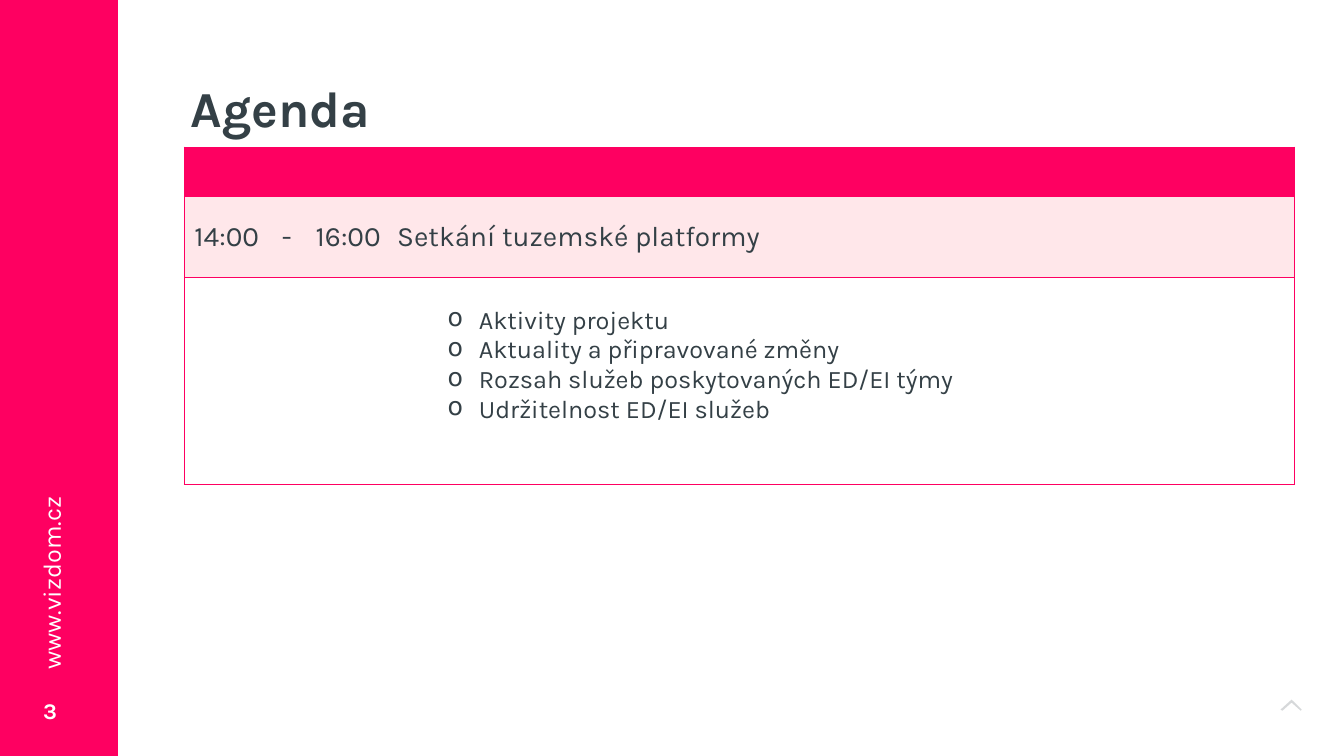
from lxml import etree
from pptx import Presentation
from pptx.dml.color import RGBColor
from pptx.enum.shapes import MSO_SHAPE
from pptx.enum.text import MSO_ANCHOR as Anchor, PP_ALIGN as Align
from pptx.oxml.ns import qn
from pptx.util import Inches, Pt

WIDTH, HEIGHT = 13.33, 7.5
PINK, BLUSH, WHITE, SLATE = "FE0061", "FFE7EA", "FFFFFF", "344046"
FONT = "Karla"

TITLE = "Agenda"
WEBSITE = "www.vizdom.cz"
PAGE_NUMBER = "3"
SESSION = ["14:00", "-", "16:00", "Setkání tuzemské platformy"]
TOPICS = [
    "Aktivity projektu",
    "Aktuality a připravované změny",
    "Rozsah služeb poskytovaných ED/EI týmy",
    "Udržitelnost ED/EI služeb",
]
COLUMNS = [0.84, 0.35, 0.87, 8.95]
ROWS = [(0.49, PINK), (0.8, BLUSH), (2.06, WHITE)]
TABLE_LEFT, TABLE_TOP = 1.83, 1.46
# Chevron outline in hundredths of an inch
CHEVRON = [(1281, 694), (1291, 704), (1290, 705), (1281, 697), (1272, 705), (1270, 704)]


def color(value):
    return RGBColor.from_string(value)


def paint(shape, value):
    shape.shadow.inherit = False
    shape.fill.solid()
    shape.fill.fore_color.rgb = color(value)
    shape.line.fill.background()


def write(para, text, size, ink=SLATE, bold=False, align=Align.LEFT):
    para.alignment = align
    span = para.add_run()
    span.text = text
    span.font.name = FONT
    span.font.size = Pt(size)
    span.font.bold = bold
    span.font.color.rgb = color(ink)


def add_text(slide, text, left, top, width, height, inset=0.1, anchor=Anchor.TOP,
             spacing=1.0, rotation=0, **style):
    box = slide.shapes.add_textbox(*map(Inches, (left, top, width, height)))
    box.rotation = rotation
    frame = box.text_frame
    frame.word_wrap = True
    frame.vertical_anchor = anchor
    frame.margin_left = frame.margin_right = Inches(inset)
    para = frame.paragraphs[0]
    para.line_spacing = spacing
    write(para, text, **style)


def add_bullet(para):
    properties = para._p.get_or_add_pPr()
    properties.set("marL", str(Inches(0.81)))
    properties.set("indent", str(Inches(-0.31)))
    etree.SubElement(properties, qn("a:buChar")).set("char", "o")


def set_borders(cell, sides):
    """Draw the named sides (L, R, T, B) in pink and hide the others."""
    properties = cell._tc.get_or_add_tcPr()
    for side in "LRTB":
        line = etree.SubElement(properties, qn(f"a:ln{side}"), w=str(Pt(1)))
        if side in sides:
            fill = etree.SubElement(line, qn("a:solidFill"))
            etree.SubElement(fill, qn("a:srgbClr"), val=PINK)
        else:
            etree.SubElement(line, qn("a:noFill"))


def add_sidebar(slide):
    bar = slide.shapes.add_shape(
        MSO_SHAPE.RECTANGLE, 0, 0, Inches(1.17), Inches(HEIGHT))
    paint(bar, PINK)
    add_text(slide, PAGE_NUMBER, 0.33, 6.75, 0.5, 0.6, anchor=Anchor.MIDDLE,
             size=16, ink=WHITE, bold=True)
    add_text(slide, WEBSITE, -0.68, 5.35, 2.38, 0.41, rotation=270,
             size=18, ink=WHITE)


def add_chevron(slide):
    builder = slide.shapes.build_freeform(*CHEVRON[0], scale=Inches(0.01))
    builder.add_line_segments(CHEVRON[1:], close=True)
    chevron = builder.convert_to_shape()
    paint(chevron, SLATE)
    tint = chevron._element.spPr.find(qn("a:solidFill"))[0]
    etree.SubElement(tint, qn("a:alpha"), val="20000")


def add_agenda(slide):
    table = slide.shapes.add_table(
        len(ROWS), len(COLUMNS), Inches(TABLE_LEFT), Inches(TABLE_TOP),
        Inches(sum(COLUMNS)), Inches(sum(height for height, _ in ROWS))).table
    table.first_row = table.horz_banding = False
    last = len(COLUMNS) - 1
    for index, width in enumerate(COLUMNS):
        table.columns[index].width = Inches(width)
    for row, (height, fill) in enumerate(ROWS):
        table.rows[row].height = Inches(height)
        for index in range(len(COLUMNS)):
            cell = table.cell(row, index)
            set_borders(cell, "TB" + {0: "L", last: "R"}.get(index, ""))
            cell.fill.solid()
            cell.fill.fore_color.rgb = color(fill)
            cell.vertical_anchor = Anchor.MIDDLE
            cell.margin_left = cell.margin_right = Inches(0.05)
            cell.margin_top = cell.margin_bottom = 0

    for index, text in enumerate(SESSION):
        write(table.cell(1, index).text_frame.paragraphs[0], text, 20,
              align=Align.LEFT if index == last else Align.CENTER)

    topics = table.cell(2, last)
    topics.margin_bottom = Inches(0.31)
    frame = topics.text_frame
    for index, text in enumerate(TOPICS):
        para = frame.add_paragraph() if index else frame.paragraphs[0]
        add_bullet(para)
        write(para, text, 18)


def main():
    deck = Presentation()
    deck.slide_width, deck.slide_height = Inches(WIDTH), Inches(HEIGHT)
    slide = deck.slides.add_slide(deck.slide_layouts[6])
    add_chevron(slide)
    add_sidebar(slide)
    add_text(slide, TITLE, 1.89, 0.78, 3.11, 0.68, inset=0, spacing=0.9,
             size=36, bold=True)
    add_agenda(slide)
    deck.save("out.pptx")


if __name__ == "__main__":
    main()
